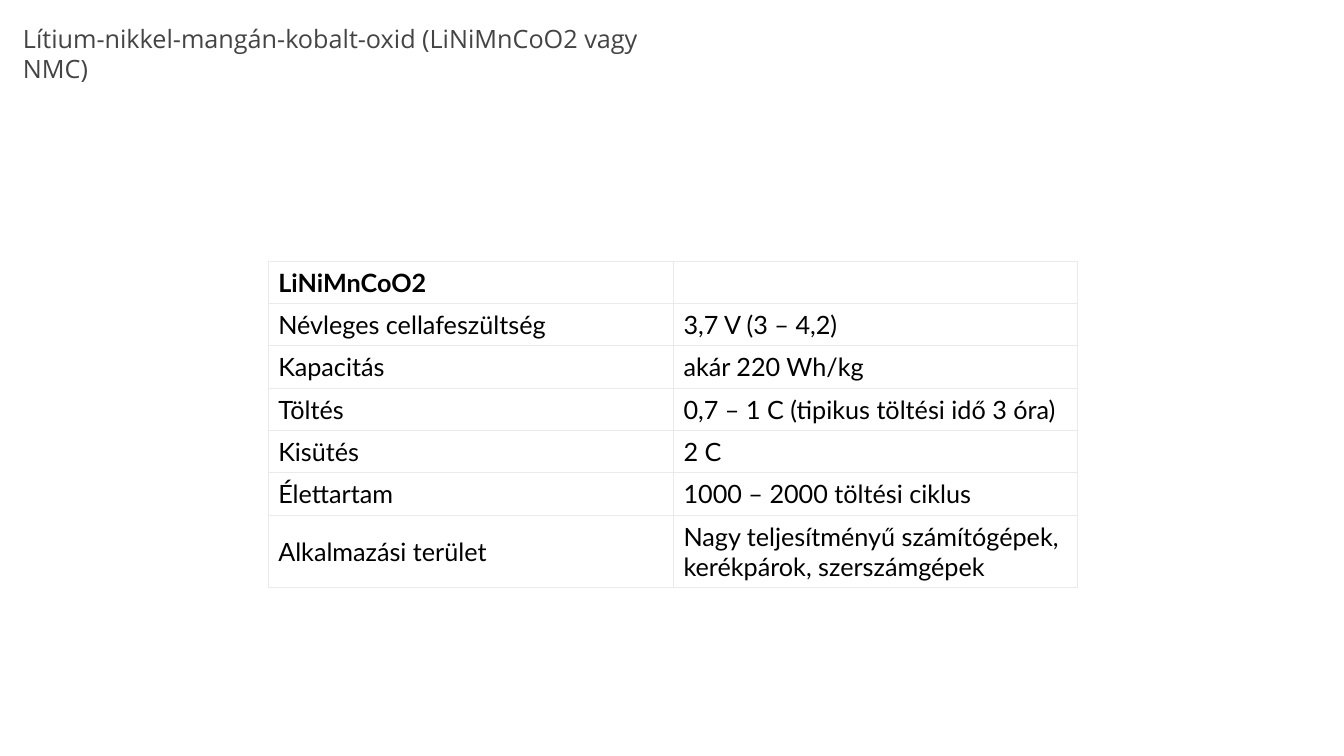
from lxml import etree
from pptx import Presentation
from pptx import util as u
from pptx.dml.color import RGBColor
from pptx.enum import text
from pptx.oxml import ns

COLORS = {"title": "444444", "body": "000000", "cell": "FFFFFF", "border": "EAEAEA"}
TITLE = "Lítium-nikkel-mangán-kobalt-oxid (LiNiMnCoO2 vagy NMC)"
ROWS = [
    ("LiNiMnCoO2", ""),
    ("Névleges cellafeszültség", "3,7 V (3 – 4,2)"),
    ("Kapacitás", "akár 220 Wh/kg"),
    ("Töltés", "0,7 – 1 C (tipikus töltési idő 3 óra)"),
    ("Kisütés", "2 C"),
    ("Élettartam", "1000 – 2000 töltési ciklus"),
    ("Alkalmazási terület", "Nagy teljesítményű számítógépek, kerékpárok, szerszámgépek"),
]
COLUMN_WIDTHS = (4.02, 4.01)
ROW_HEIGHT, LAST_ROW_HEIGHT = 0.42, 0.72
CELL_FORMAT = {
    "margin_left": u.Inches(0.1),
    "margin_right": u.Inches(0.1),
    "margin_top": u.Inches(0.06),
    "margin_bottom": u.Inches(0.06),
    "vertical_anchor": text.MSO_ANCHOR.MIDDLE,
}


def apply_format(target, values):
    """Set every attribute named in values on the target."""
    for name, value in values.items():
        setattr(target, name, value)


def write_text(frame, content, color, **font_values):
    """Write one formatted paragraph into a text frame."""
    para = frame.paragraphs[0]
    if content:
        para.add_run().text = content
    for font in [para.font] + [span.font for span in para.runs]:
        apply_format(font, {"size": u.Pt(18), **font_values})
        font.color.rgb = RGBColor.from_string(COLORS[color])


def add_title(page, content):
    """Add the title in the upper left corner."""
    box = page.shapes.add_textbox(u.Inches(0.13), u.Inches(0.18), u.Inches(6.67), u.Inches(0.71))
    apply_format(box.text_frame, {"word_wrap": True, "auto_size": text.MSO_AUTO_SIZE.SHAPE_TO_FIT_TEXT})
    write_text(box.text_frame, content, "title", name="Open Sans")


def add_borders(cell):
    """Draw a thin line on all four sides of a cell."""
    properties = cell._tc.get_or_add_tcPr()
    for side in ("a:lnL", "a:lnR", "a:lnT", "a:lnB"):
        line = etree.SubElement(properties, ns.qn(side), w=str(u.Pt(0.75)))
        fill = etree.SubElement(line, ns.qn("a:solidFill"))
        etree.SubElement(fill, ns.qn("a:srgbClr"), val=COLORS["border"])


def format_cell(cell, content, bold):
    """Give a cell its borders, fill, margins and text."""
    add_borders(cell)
    cell.fill.solid()
    cell.fill.fore_color.rgb = RGBColor.from_string(COLORS["cell"])
    apply_format(cell, CELL_FORMAT)
    write_text(cell.text_frame, content, "body", name="Lato", bold=bold)


def add_data_table(page, rows):
    """Add the table of battery properties."""
    heights = [ROW_HEIGHT] * (len(rows) - 1) + [LAST_ROW_HEIGHT]
    table = page.shapes.add_table(
        len(rows), len(COLUMN_WIDTHS), u.Inches(2.66), u.Inches(2.59),
        u.Inches(sum(COLUMN_WIDTHS)), u.Inches(sum(heights)),
    ).table
    apply_format(table, {"horz_banding": False})
    for column, width in zip(table.columns, COLUMN_WIDTHS):
        column.width = u.Inches(width)
    for row_index, (row, height) in enumerate(zip(rows, heights)):
        table.rows[row_index].height = u.Inches(height)
        for column_index, content in enumerate(row):
            format_cell(table.cell(row_index, column_index), content, row_index == 0)


def main():
    """Build the slide and save the deck."""
    deck = Presentation()
    apply_format(deck, {"slide_width": u.Inches(13.33), "slide_height": u.Inches(7.5)})
    page = deck.slides.add_slide(deck.slide_layouts[6])
    add_title(page, TITLE)
    add_data_table(page, ROWS)
    deck.save("out.pptx")


if __name__ == "__main__":
    main()
